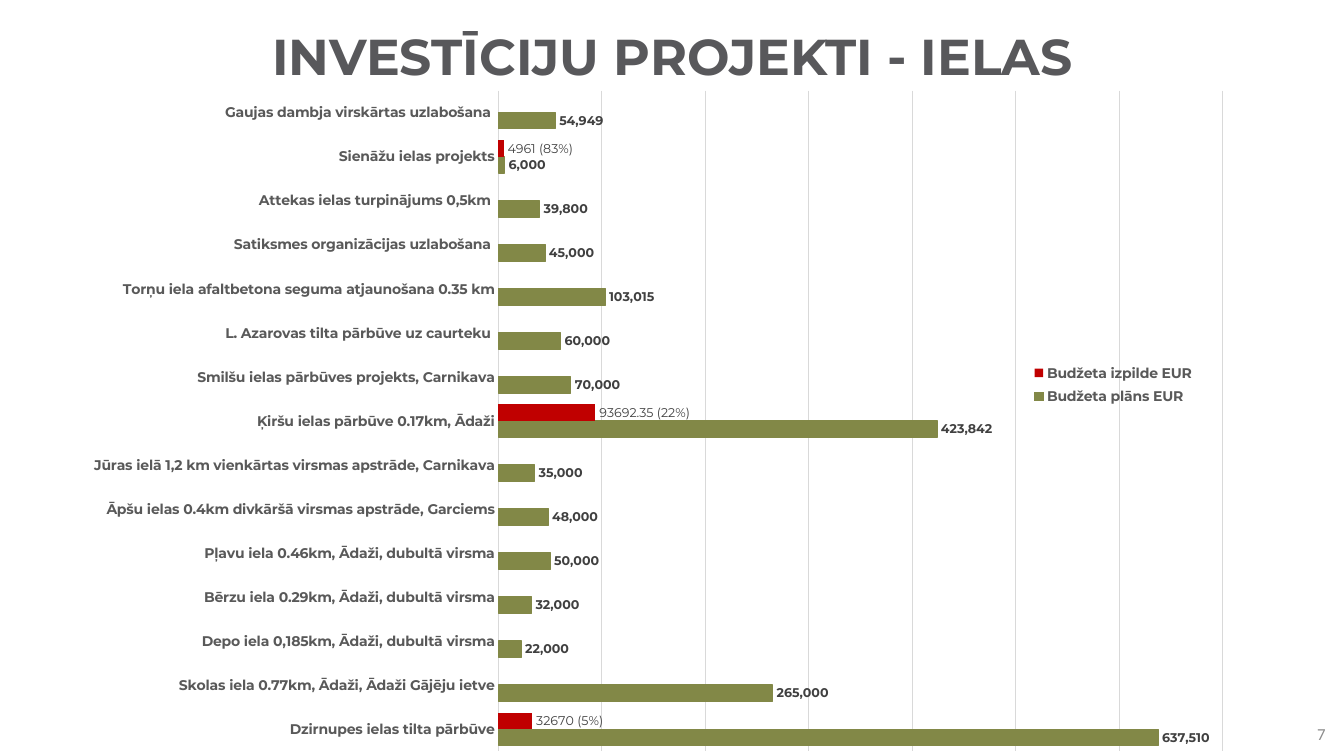
from pptx import Presentation
from pptx.chart.data import CategoryChartData
from pptx.dml.color import RGBColor
from pptx.enum import chart as ch, text as tx
from pptx.oxml import parse_xml
from pptx.oxml.ns import nsdecls
from pptx.util import Pt

WHITE = RGBColor(0xFF, 0xFF, 0xFF)
BLACK = RGBColor(0, 0, 0)
TITLE = RGBColor(0x58, 0x58, 0x5B)
GREY = RGBColor(0x59, 0x59, 0x59)
DARK = RGBColor(0x40, 0x40, 0x40)
PALE = RGBColor(0x8C, 0x8C, 0x8C)
GRID = RGBColor(0xD9, 0xD9, 0xD9)
OLIVE = RGBColor(0x82, 0x88, 0x47)
RED = RGBColor(0xC0, 0, 0)

# street, planned, spent, label of the spent bar; bottom row first
STREETS = [
    ("Dzirnupes ielas tilta pārbūve", 637510, 32670, "32670 (5%)"),
    ("Skolas iela 0.77km, Ādaži, Ādaži Gājēju ietve", 265000, None, None),
    ("Depo iela 0,185km, Ādaži, dubultā virsma", 22000, None, None),
    ("Bērzu iela 0.29km, Ādaži, dubultā virsma", 32000, None, None),
    ("Pļavu iela 0.46km, Ādaži, dubultā virsma", 50000, None, None),
    ("Āpšu ielas 0.4km divkāršā virsmas apstrāde, Garciems", 48000, None, None),
    ("Jūras ielā 1,2 km vienkārtas virsmas apstrāde, Carnikava", 35000, None, None),
    ("Ķiršu ielas pārbūve 0.17km, Ādaži", 423842, 93692.35, "93692.35 (22%)"),
    ("Smilšu ielas pārbūves projekts, Carnikava", 70000, None, None),
    ("L. Azarovas tilta pārbūve uz caurteku ", 60000, None, None),
    ("Torņu iela afaltbetona seguma atjaunošana 0.35 km", 103015, None, None),
    ("Satiksmes organizācijas uzlabošana ", 45000, None, None),
    ("Attekas ielas turpinājums 0,5km ", 39800, None, None),
    ("Sienāžu ielas projekts", 6000, 4961, "4961 (83%)"),
    ("Gaujas dambja virskārtas uzlabošana ", 54949, None, None),
]


def style(font, size, color, bold=False, name="Montserrat"):
    font.size, font.bold, font.name = Pt(size), bold, name
    font.color.rgb = color


def write(frame, words, align=None, space=None, **form):
    """Fill a text frame with one formatted paragraph."""
    para = frame.paragraphs[0]
    para.alignment, para.line_spacing = align, space
    run = para.add_run()
    run.text = words
    style(run.font, **form)


def layout(parent, index, x, y, w, h, inner=False):
    """Place a chart part by fractions of the chart area."""
    for old in parent.xpath("./c:layout"):
        parent.remove(old)
    target = '<c:layoutTarget val="inner"/>' if inner else ""
    sizes = "".join(f'<c:{tag} val="{val}"/>'
                    for tag, val in zip("xywh", (x, y, w, h)))
    parent.insert(index, parse_xml(
        f'<c:layout {nsdecls("c")}><c:manualLayout>{target}'
        f'<c:xMode val="edge"/><c:yMode val="edge"/>{sizes}'
        f'</c:manualLayout></c:layout>'))


class Deck:
    def __init__(self):
        self.prs = Presentation()
        self.prs.slide_width, self.prs.slide_height = Pt(960), Pt(540)
        self.slide = self.prs.slides.add_slide(self.prs.slide_layouts[5])
        fill = self.slide.background.fill
        fill.solid()
        fill.fore_color.rgb = WHITE

    def frame(self, shape, words, **form):
        frame = shape.text_frame
        frame.word_wrap = True
        frame.auto_size = tx.MSO_AUTO_SIZE.NONE
        frame.vertical_anchor = tx.MSO_ANCHOR.MIDDLE
        write(frame, words, **form)

    def title(self, words, x, y, w, h):
        shape = self.slide.shapes.title
        shape.left, shape.top, shape.width, shape.height = map(Pt, (x, y, w, h))
        self.frame(shape, words, align=tx.PP_ALIGN.CENTER, space=0.9,
                   size=36, color=TITLE, bold=True)

    def number(self, words, x, y, w, h):
        box = self.slide.shapes.add_textbox(*map(Pt, (x, y, w, h)))
        self.frame(box, words, align=tx.PP_ALIGN.RIGHT, size=12,
                   color=PALE, name="Calibri")

    def bars(self, x, y, w, h):
        names, plan, spent, notes = zip(*STREETS)
        data = CategoryChartData(number_format="#,##0")
        data.categories = names
        data.add_series("Budžeta plāns EUR", plan)
        data.add_series("Budžeta izpilde EUR", spent, number_format="General")
        chart = self.slide.shapes.add_chart(
            ch.XL_CHART_TYPE.BAR_CLUSTERED, *map(Pt, (x, y, w, h)), data).chart
        chart.has_title = False
        style(chart.font, 10, BLACK, name="Calibri")
        self.axes(chart)
        self.legend(chart)
        plot = chart.plots[0]
        plot.gap_width, plot.overlap, plot.vary_by_categories = 69, 0, False
        for row, color in zip(plot.series, (OLIVE, RED)):
            self.series(row, color)
        olive, red = plot.series
        olive.format.line.color.rgb = OLIVE
        olive.format.line.width = Pt(0.75)
        for i, note in enumerate(notes):
            if note:
                label = red.points[i].data_label
                write(label.text_frame, note, size=9, color=DARK)
                label.position = ch.XL_LABEL_POSITION.OUTSIDE_END
        layout(chart.element.xpath(".//c:plotArea")[0], 0,
               0.376, 0.012, 0.588, 0.984, inner=True)

    def axes(self, chart):
        cat, val = chart.category_axis, chart.value_axis
        cat.major_tick_mark = cat.minor_tick_mark = ch.XL_TICK_MARK.NONE
        cat.format.line.fill.background()
        style(cat.tick_labels.font, 10, GREY, True)
        val.minimum_scale, val.maximum_scale, val.major_unit = 0, 700000, 100000
        val.has_major_gridlines = True
        line = val.major_gridlines.format.line
        line.color.rgb, line.width = GRID, Pt(0.75)
        val.tick_labels.number_format = "#,##0"
        val.tick_labels.number_format_is_linked = False
        val.visible = False

    def legend(self, chart):
        chart.has_legend = True
        chart.legend.position = ch.XL_LEGEND_POSITION.BOTTOM
        chart.legend.include_in_layout = False
        style(chart.legend.font, 10, GREY, True)
        layout(chart.element.xpath(".//c:legend")[0], 1, 0.8, 0.41, 0.15, 0.08)

    def series(self, row, color):
        row.invert_if_negative = False
        row.format.fill.solid()
        row.format.fill.fore_color.rgb = color
        labels = row.data_labels
        labels.show_value = True
        labels.position = ch.XL_LABEL_POSITION.OUTSIDE_END
        if color == OLIVE:
            labels.number_format = "#,##0"
            labels.number_format_is_linked = False
        style(labels.font, 9, DARK, True)


def main():
    deck = Deck()
    deck.title("INVESTĪCIJU PROJEKTI - IELAS", 67, 16, 826.5, 52)
    deck.number("7", 738, 510, 216, 28.8)
    deck.bars(25.2, 59, 880, 479.5)
    deck.prs.save("out.pptx")


if __name__ == "__main__":
    main()
